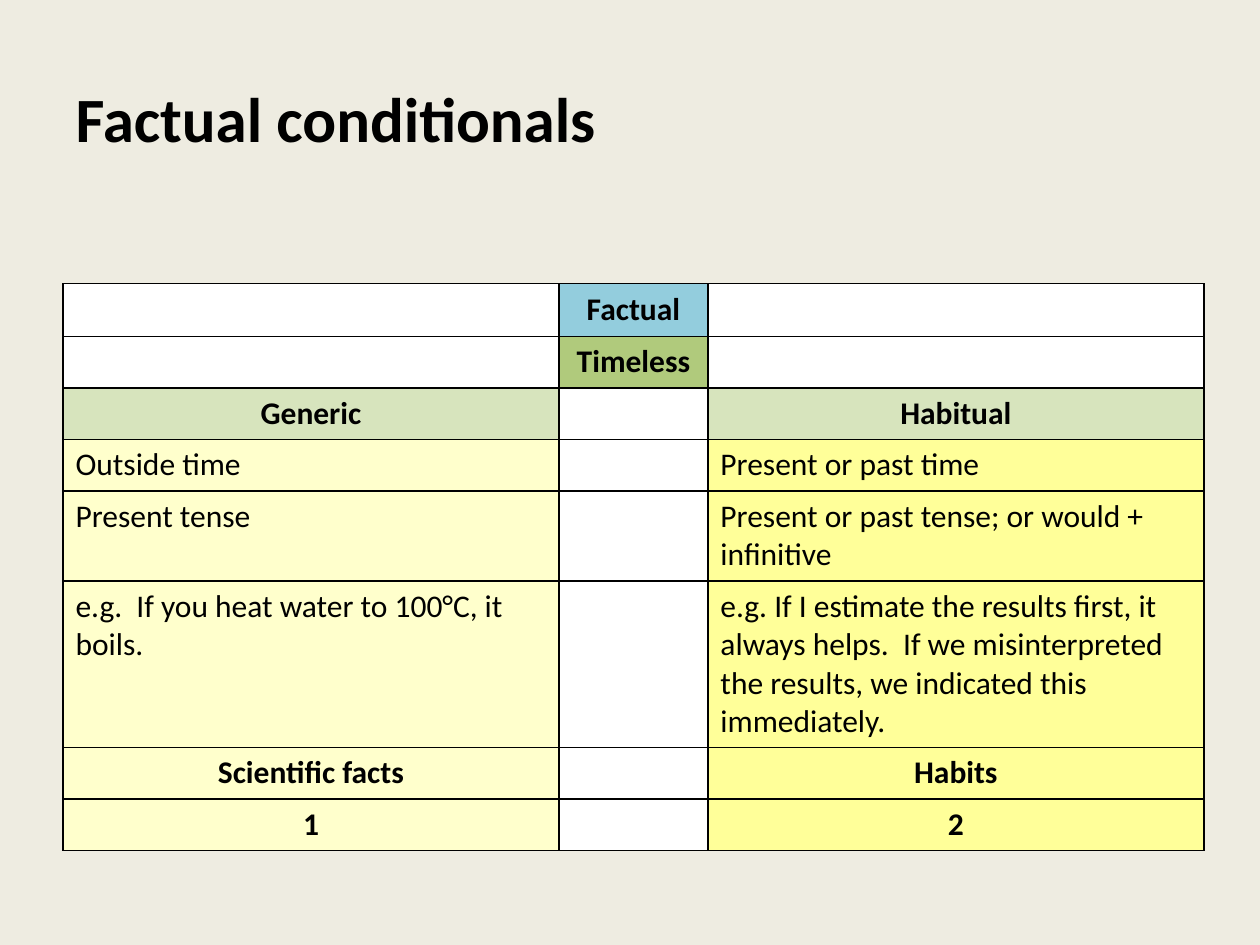
"""Build a slide with a table comparing generic and habitual factual conditionals."""
from lxml import etree
from pptx import Presentation
from pptx.dml.color import RGBColor
from pptx.enum import text
from pptx.oxml import ns
from pptx.util import Cm, Pt


def paint(fill, colour):
    fill.solid()
    fill.fore_color.rgb = RGBColor.from_string(colour)


def add_borders(cell, colour, width):
    properties = cell._tc.get_or_add_tcPr()
    for position, side in enumerate(("lnL", "lnR", "lnT", "lnB")):
        line = etree.Element(ns.qn(f"a:{side}"), w=str(Pt(width)))
        solid = etree.SubElement(line, ns.qn("a:solidFill"))
        etree.SubElement(solid, ns.qn("a:srgbClr"), val=colour)
        properties.insert(position, line)


WHITE, BLUE, GREEN, PALE_GREEN = "FFFFFF", "93CDDD", "B0CA7C", "D7E4BD"
CREAM, YELLOW = "FFFFCC", "FFFF99"

deck = Presentation()
deck.slide_width, deck.slide_height = Cm(25.4), Cm(19.05)
page = deck.slides.add_slide(deck.slide_layouts[5])
paint(page.background.fill, "EEECE1")

title = page.shapes.title
title.left, title.top, title.width, title.height = Cm(1.27), Cm(0.76), Cm(22.86), Cm(3.2)
title.text_frame.text = "Factual conditionals"
title.text_frame.vertical_anchor = text.MSO_ANCHOR.MIDDLE
heading = title.text_frame.paragraphs[0]
heading.alignment = text.PP_ALIGN.LEFT
heading.font.name, heading.font.size, heading.font.bold = "Calibri", Pt(36), True
heading.font.color.rgb = RGBColor.from_string("000000")

rows = [
    (1.06, True, ("", "Factual", ""), (WHITE, BLUE, WHITE)),
    (1.04, True, ("", "Timeless", ""), (WHITE, GREEN, WHITE)),
    (1.04, True, ("Generic", "", "Habitual"), (PALE_GREEN, WHITE, PALE_GREEN)),
    (1.04, False, ("Outside time", "", "Present or past time"), (CREAM, WHITE, YELLOW)),
    (1.81, False, ("Present tense", "", "Present or past tense; or would + infinitive"),
     (CREAM, WHITE, YELLOW)),
    (3.35, False, ("e.g.  If you heat water to 100°C, it boils.", "",
                   "e.g. If I estimate the results first, it always helps.  "
                   "If we misinterpreted the results, we indicated this immediately."),
     (CREAM, WHITE, YELLOW)),
    (1.04, True, ("Scientific facts", "", "Habits"), (CREAM, WHITE, YELLOW)),
    (1.04, True, ("1", "", "2"), (CREAM, WHITE, YELLOW)),
]
widths = (10, 3, 10)
total_height = sum(height for height, *_ in rows)
table = page.shapes.add_table(len(rows), len(widths), Cm(1.27), Cm(5.72),
                              Cm(sum(widths)), Cm(total_height)).table
for column, width in zip(table.columns, widths):
    column.width = Cm(width)

for row, (height, is_heading, words, fills) in zip(table.rows, rows):
    row.height = Cm(height)
    for cell, wording, colour in zip(row.cells, words, fills):
        paint(cell.fill, colour)
        add_borders(cell, "000000", 1)
        cell.text = wording
        para = cell.text_frame.paragraphs[0]
        para.alignment = text.PP_ALIGN.CENTER if is_heading else text.PP_ALIGN.LEFT
        para.font.name, para.font.size, para.font.bold = "Calibri", Pt(18), is_heading
        para.font.color.rgb = RGBColor.from_string("000000")

deck.save("out.pptx")
